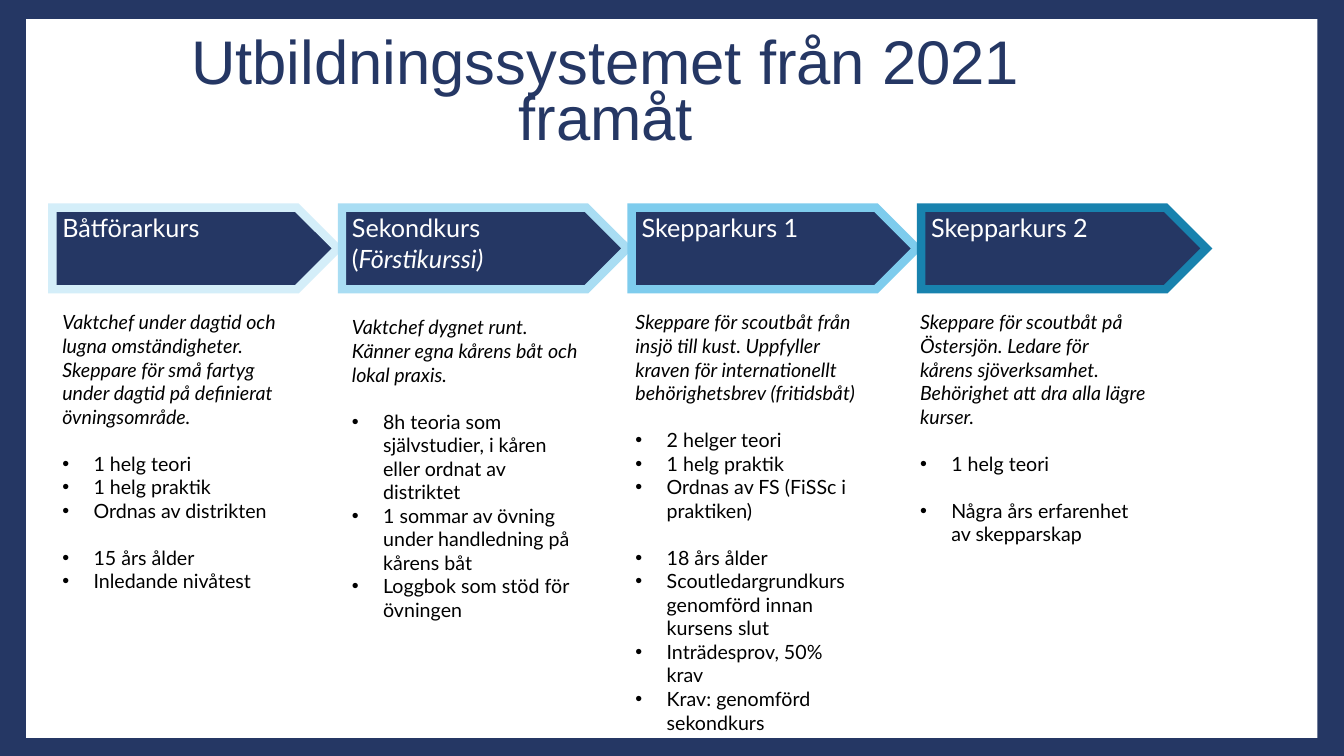
from dataclasses import dataclass

from lxml.etree import SubElement
from pptx import Presentation
from pptx.dml.color import RGBColor
from pptx.enum.shapes import MSO_SHAPE as Shape
from pptx.enum.text import MSO_ANCHOR as Anchor, PP_ALIGN as Align
from pptx.oxml.ns import qn
from pptx.util import Inches, Pt

NAVY, WHITE, BLACK = "253764", "FFFFFF", "000000"

# Grid in inches: four columns, a row of arrows and a row of details
LEFT, PITCH = 0.52, 2.873
ARROW_TOP, ARROW_WIDTH, ARROW_HEIGHT = 2.06, 2.83, 0.81
HEADING_WIDTH = 2.68
DETAIL_TOP, DETAIL_WIDTH, DETAIL_HEIGHT = 3.03, 2.44, 4.2
INDENT = 0.31
DETAIL_SIZE = 14
GROUP_GAP = DETAIL_SIZE * 1.2  # one line of text


@dataclass
class Course:
    heading: str
    edge: str
    summary: list[str]
    groups: list[list[str]]
    subheading: str = ""
    shift: float = 0
    drop: float = 0


COURSES = [
    Course("Båtförarkurs", "D4EEF9",
           ["Vaktchef under dagtid och lugna omständigheter.",
            "Skeppare för små fartyg under dagtid på definierat övningsområde."],
           [["1 helg teori", "1 helg praktik", "Ordnas av distrikten"],
            ["15 års ålder", "Inledande nivåtest"]]),
    Course("Sekondkurs (", "A9DDF3",
           ["Vaktchef dygnet runt. Känner egna kårens båt och lokal praxis."],
           [["8h teoria som självstudier, i kåren eller ordnat av distriktet",
             "1 sommar av övning under handledning på kårens båt",
             "Loggbok som stöd för övningen"]],
           subheading="Förstikurssi)", drop=0.05),
    Course("Skepparkurs 1", "7ECCED",
           ["Skeppare för scoutbåt från insjö till kust. Uppfyller kraven för "
            "internationellt behörighetsbrev (fritidsbåt)"],
           [["2 helger teori", "1 helg praktik", "Ordnas av FS (FiSSc i praktiken)"],
            ["18 års ålder", "Scoutledargrundkurs genomförd innan kursens slut",
             "Inträdesprov, 50% krav", "Krav: genomförd sekondkurs"]],
           shift=-0.06),
    Course("Skepparkurs 2", "1882AE",
           ["Skeppare för scoutbåt på Östersjön. Ledare för kårens sjöverksamhet. "
            "Behörighet att dra alla lägre kurser."],
           [["1 helg teori"], ["Några års erfarenhet av skepparskap"]],
           shift=-0.11),
]


def colour(value: str) -> RGBColor:
    return RGBColor.from_string(value)


def add_block(page, kind, left: float, top: float, width: float, height: float,
              fill: str, edge: str = "", weight: float = 0):
    block = page.shapes.add_shape(
        kind, Inches(left), Inches(top), Inches(width), Inches(height))
    block.shadow.inherit = False
    block.fill.solid()
    block.fill.fore_color.rgb = colour(fill)
    if edge:
        block.line.color.rgb = colour(edge)
        block.line.width = Pt(weight)
        SubElement(block.line._get_or_add_ln(), qn("a:miter"), lim="800000")
    else:
        block.line.fill.background()
    return block


def add_frame(page, left: float, top: float, width: float, height: float):
    box = page.shapes.add_textbox(
        Inches(left), Inches(top), Inches(width), Inches(height))
    box.text_frame.word_wrap = True
    return box.text_frame


def add_span(para, text: str, *, size: float, color: str, font: str = "Lato",
             italic: bool = False) -> None:
    span = para.add_run()
    span.text = text
    span.font.name = font
    span.font.size = Pt(size)
    span.font.italic = italic
    span.font.color.rgb = colour(color)


def next_para(frame):
    first = frame.paragraphs[0]
    return frame.add_paragraph() if first.runs else first


def add_bullet(para) -> None:
    properties = para._p.get_or_add_pPr()
    properties.set("marL", str(Inches(INDENT)))
    properties.set("indent", str(-Inches(INDENT)))
    SubElement(properties, qn("a:buFont"), typeface="Arial")
    SubElement(properties, qn("a:buChar"), char="•")


def add_course(page, column: int, course: Course) -> None:
    left = LEFT + column * PITCH

    # Arrow and heading
    add_block(page, Shape.PENTAGON, left, ARROW_TOP, ARROW_WIDTH, ARROW_HEIGHT,
              NAVY, course.edge, 6)
    heading = add_frame(page, left, ARROW_TOP, HEADING_WIDTH, ARROW_HEIGHT)
    para = heading.paragraphs[0]
    add_span(para, course.heading, size=18, color=WHITE)
    if course.subheading:
        add_span(para, course.subheading, size=18, color=WHITE, italic=True)

    # Summary and bulleted requirements
    details = add_frame(page, left + course.shift, DETAIL_TOP + course.drop,
                        DETAIL_WIDTH, DETAIL_HEIGHT)
    for sentence in course.summary:
        add_span(next_para(details), sentence, size=DETAIL_SIZE, color=BLACK, italic=True)
    for group in course.groups:
        for position, item in enumerate(group):
            para = next_para(details)
            add_bullet(para)
            if position == 0:
                para.space_before = Pt(GROUP_GAP)
            add_span(para, item, size=DETAIL_SIZE, color=BLACK)


def main() -> None:
    deck = Presentation()
    deck.slide_width, deck.slide_height = Inches(13.333), Inches(7.5)
    page = deck.slides.add_slide(deck.slide_layouts[6])

    # Navy border around a white panel
    page.background.fill.solid()
    page.background.fill.fore_color.rgb = colour(NAVY)
    add_block(page, Shape.RECTANGLE, 0.26, 0.19, 12.81, 7.13, WHITE)

    # Title
    title = add_frame(page, 1, 0.76, 10.02, 0.81)
    title.vertical_anchor = Anchor.BOTTOM
    para = title.paragraphs[0]
    para.alignment = Align.CENTER
    para.line_spacing = Pt(40)
    add_span(para, "Utbildningssystemet från 2021 framåt",
             size=44, color=NAVY, font="Arial")

    # Course path
    for column, course in enumerate(COURSES):
        add_course(page, column, course)

    deck.save("out.pptx")


if __name__ == "__main__":
    main()
